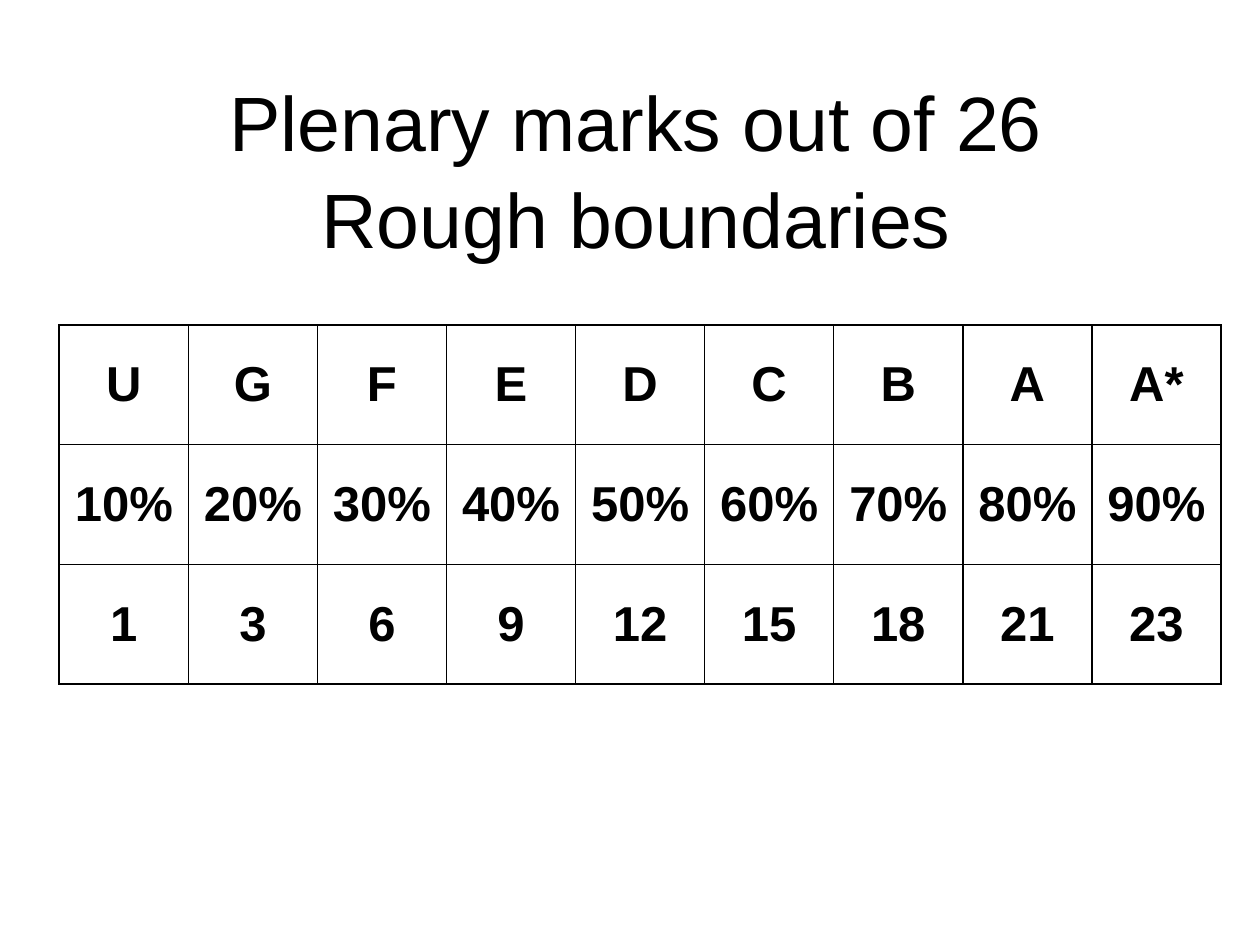
"""Build a slide with a table of rough grade boundaries."""
import pptx
import pptx.dml.color
import pptx.enum.text
import pptx.oxml
import pptx.oxml.ns
import pptx.util

Inches, Pt = pptx.util.Inches, pptx.util.Pt
PP_ALIGN = pptx.enum.text.PP_ALIGN
MIDDLE = pptx.enum.text.MSO_ANCHOR.MIDDLE

TITLE = "Plenary marks out of 26\vRough boundaries"
ROWS = [
    ("U", "G", "F", "E", "D", "C", "B", "A", "A*"),
    ("10%", "20%", "30%", "40%", "50%", "60%", "70%", "80%", "90%"),
    ("1", "3", "6", "9", "12", "15", "18", "21", "23"),
]
BLACK = "000000"
LEFT, TOP, WIDTH, ROW_HEIGHT = 0.47, 2.58, 9.22, 0.95


def format_paragraph(p, size, bold=False, color=BLACK):
    p.alignment = PP_ALIGN.CENTER
    p.font.name = "Arial"
    p.font.size = Pt(size)
    p.font.bold = bold
    p.font.color.rgb = pptx.dml.color.RGBColor.from_string(color)


def add_borders(cell, color=BLACK, width=1):
    tc_pr = cell._tc.get_or_add_tcPr()
    for side in ("lnL", "lnR", "lnT", "lnB"):
        tc_pr.append(pptx.oxml.parse_xml(
            f'<a:{side} {pptx.oxml.ns.nsdecls("a")} w="{Pt(width)}">'
            f'<a:solidFill><a:srgbClr val="{color}"/></a:solidFill></a:{side}>'))


def add_title(s):
    sp = s.shapes.title
    sp.left, sp.top, sp.width, sp.height = map(Inches, (0.55, 0.7, 9, 1.25))
    tf = sp.text_frame
    tf.text = TITLE
    tf.word_wrap = True
    tf.auto_size = pptx.enum.text.MSO_AUTO_SIZE.NONE
    tf.vertical_anchor = MIDDLE
    p = tf.paragraphs[0]
    format_paragraph(p, 44)
    p.line_spacing = 1.05


def add_boundaries(s):
    n_rows, n_cols = len(ROWS), len(ROWS[0])
    table = s.shapes.add_table(
        n_rows, n_cols, Inches(LEFT), Inches(TOP),
        Inches(WIDTH), Inches(ROW_HEIGHT * n_rows)).table
    table.first_row = table.horz_banding = False
    for r, values in enumerate(ROWS):
        for c, value in enumerate(values):
            cell = table.cell(r, c)
            cell.text = value
            cell.vertical_anchor = MIDDLE
            format_paragraph(cell.text_frame.paragraphs[0], 28, bold=True)
            add_borders(cell)
            cell.fill.background()


def main():
    prs = pptx.Presentation()
    prs.slide_width, prs.slide_height = Inches(10), Inches(7.5)
    s = prs.slides.add_slide(prs.slide_layouts[5])
    add_title(s)
    add_boundaries(s)
    prs.save("out.pptx")


if __name__ == "__main__":
    main()
